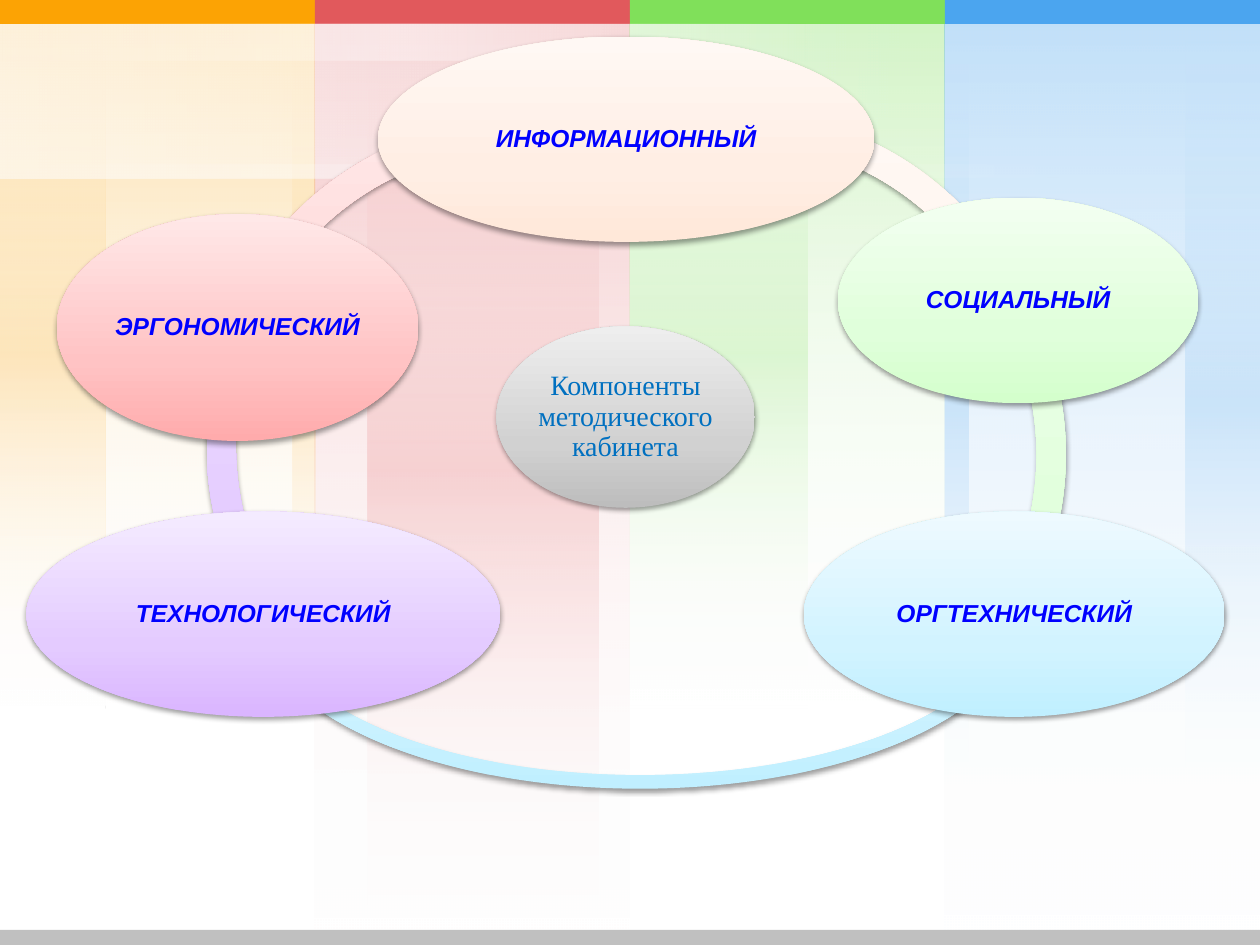
import math

import lxml.etree
import pptx
import pptx.dml.color
import pptx.enum.shapes
import pptx.enum.text
import pptx.oxml.ns
import pptx.util

Inches = pptx.util.Inches
Pt = pptx.util.Pt
qn = pptx.oxml.ns.qn
SHAPE = pptx.enum.shapes.MSO_SHAPE

ORANGE, RED, GREEN, BLUE = "FCA304", "E1595C", "80E05A", "4BA5EF"
WHITE = "FFFFFF"
BAND_WIDTH = 2.5
BANDS = [
    (RED, 2.5, 7.5, [(2.92, 1.83, 7.5)]),
    (GREEN, 5, 5.62, [(5, 1.41, 5.62)]),
    (BLUE, 7.5, 7.47, [(7.5, 0.19, 6.37), (9.41, 0.59, 6.37)]),
    (ORANGE, 0, 5.62, [(2.32, 0.18, 5.62), (0, 0.84, 5.62)]),
]
GLOW_FADE = [(0, WHITE, 35), (100, WHITE, 0)]
GLOW_CENTRE = [(0, WHITE, 0), (50, WHITE, 35), (100, WHITE, 0)]
GLOWS = [
    ((4.16, -2.85, 0.1, 8.42), GLOW_CENTRE),
    ((3.15, -2.95, 1.22, 7.51), GLOW_FADE),
    ((3.06, -2.87, 0.29, 6.41), GLOW_CENTRE),
    ((3.15, -2.95, 1.22, 7.51), GLOW_FADE),
]

PINK = ("FFABAC", "FFC3C4", "FFE8E8")
VIOLET = ("DAB5FF", "E4CBFF", "F4EBFF")
SKY = ("C0EFFF", "D2F3FF", "EEFAFF")
MINT = ("D4FFCC", "E0FFDB", "F3FFF1")
PEACH = ("FFE8D9", "FFEEE4", "FFF8F4")
GREY = ("BDBDBD", "D1D1D1", "EEEEEE")
ARCS = [
    ((1.61, 0.94, 5.06, 5.06), PINK, (120.08, 172.74, 0.046)),
    ((1.64, 1.01, 5.06, 5.06), VIOLET, (88.29, 121.4, 0.046)),
    ((2.04, 3.49, 6.08, 2.77), SKY, (216, 108, 0.039)),
    ((3.4, 1.08, 5.06, 5.06), MINT, (198.19, 18.53, 0.046)),
    ((3.3, 0.88, 5.06, 5.06), PEACH, (149.66, 201.29, 0.046)),
]
CENTRE_FORMAT = {"size": Pt(16), "name": "Times New Roman"}
LABEL_FORMAT = {"size": Pt(14), "name": "Arial", "bold": True, "italic": True}
COMPONENTS = [
    ("ИНФОРМАЦИОННЫЙ", (3, 0.29, 3.94, 1.63), PEACH),
    ("СОЦИАЛЬНЫЙ", (6.65, 1.57, 2.86, 1.63), MINT),
    ("ОРГТЕХНИЧЕСКИЙ", (6.38, 4.06, 3.34, 1.63), SKY),
    ("ТЕХНОЛОГИЧЕСКИЙ", (0.21, 4.06, 3.76, 1.63), VIOLET),
    ("ЭРГОНОМИЧЕСКИЙ", (0.45, 1.7, 2.87, 1.8), PINK),
]


def color(value):
    return pptx.dml.color.RGBColor.from_string(value)


def add_color(parent, value, opacity):
    element = lxml.etree.SubElement(parent, qn("a:srgbClr"), val=value)
    if opacity < 100:
        lxml.etree.SubElement(element, qn("a:alpha"), val=str(opacity * 1000))


class ComponentSlide:
    def __init__(self, slide):
        self.slide = slide
        self.shadow = {"blurRad": str(Pt(3.1)), "dist": str(Pt(1.6)),
                       "dir": "5400000", "rotWithShape": "0"}
        self.inset = Inches(0.02)

    def shape(self, kind, box):
        shape = self.slide.shapes.add_shape(kind, *map(Inches, box))
        shape.shadow.inherit = False
        shape.line.fill.background()
        return shape

    def solid(self, box, value):
        shape = self.shape(SHAPE.RECTANGLE, box)
        shape.fill.solid()
        shape.fill.fore_color.rgb = color(value)

    def gradient(self, kind, box, stops, angle=90):
        shape = self.shape(kind, box)
        properties = shape._element.spPr
        fill = lxml.etree.SubElement(properties, qn("a:gradFill"), rotWithShape="1")
        stop_list = lxml.etree.SubElement(fill, qn("a:gsLst"))
        for position, value, opacity in stops:
            stop = lxml.etree.SubElement(stop_list, qn("a:gs"), pos=str(position * 1000))
            add_color(stop, value, opacity)
        lxml.etree.SubElement(fill, qn("a:lin"), ang=str(angle * 60000), scaled="0")
        properties.find(qn("a:prstGeom")).addnext(fill)
        return shape

    def raised(self, kind, box, shades):
        stops = [(position, shade, 100) for position, shade in zip((0, 35, 100), shades)]
        shape = self.gradient(kind, box, stops, 270)
        effects = shape._element.spPr.find(qn("a:effectLst"))
        add_color(lxml.etree.SubElement(effects, qn("a:outerShdw"), self.shadow), "000000", 38)
        return shape

    def arc(self, box, shades, adjustments):
        shape = self.raised(SHAPE.BLOCK_ARC, box, shades)
        for index, value in enumerate(adjustments):
            shape.adjustments[index] = value

    def label(self, text, box, values, font_color):
        left, top, width, height = box
        scale = math.sqrt(0.5)
        margin = (1 - scale) / 2
        text_box = self.slide.shapes.add_textbox(
            Inches(left + width * margin), Inches(top + height * margin),
            Inches(width * scale), Inches(height * scale))
        frame = text_box.text_frame
        frame.word_wrap = True
        frame.vertical_anchor = pptx.enum.text.MSO_ANCHOR.MIDDLE
        for side in ("left", "top", "right", "bottom"):
            setattr(frame, f"margin_{side}", self.inset)
        paragraph = frame.paragraphs[0]
        paragraph.alignment = pptx.enum.text.PP_ALIGN.CENTER
        paragraph.line_spacing = 0.9
        run = paragraph.add_run()
        run.text = text
        for name, value in values.items():
            setattr(run.font, name, value)
        run.font.color.rgb = color(font_color)

    def component(self, text, box, shades, values=LABEL_FORMAT, font_color="0000FF"):
        self.raised(SHAPE.OVAL, box, shades)
        self.label(text, box, values, font_color)

    def background(self):
        for value, left, height, strips in BANDS:
            band = (left, 0, BAND_WIDTH, height)
            fade = [(0, value, 20), (100, WHITE, 0)]
            glow = [(0, WHITE, 0), (50, value, 20), (100, WHITE, 0)]
            self.gradient(SHAPE.RECTANGLE, band, fade)
            for strip_left, width, strip_height in strips:
                self.gradient(SHAPE.RECTANGLE, (strip_left, 0, width, strip_height), glow)
            self.gradient(SHAPE.RECTANGLE, band, fade)
        for index, value in enumerate((ORANGE, RED, GREEN, BLUE)):
            self.solid((index * BAND_WIDTH, 0, BAND_WIDTH, 0.19), value)
        for box, stops in GLOWS:
            self.gradient(SHAPE.RECTANGLE, box, stops).rotation = 270
        self.solid((0, 7.38, 10, 0.12), "C0C0C0")


def main():
    presentation = pptx.Presentation()
    presentation.slide_width = Inches(10)
    presentation.slide_height = Inches(7.5)
    page = ComponentSlide(presentation.slides.add_slide(presentation.slide_layouts[6]))
    page.background()
    for arc in ARCS:
        page.arc(*arc)
    page.component("Компоненты методического кабинета", (3.94, 2.59, 2.05, 1.44),
                   GREY, CENTRE_FORMAT, "0070C0")
    for component in COMPONENTS:
        page.component(*component)
    presentation.save("out.pptx")


if __name__ == "__main__":
    main()
